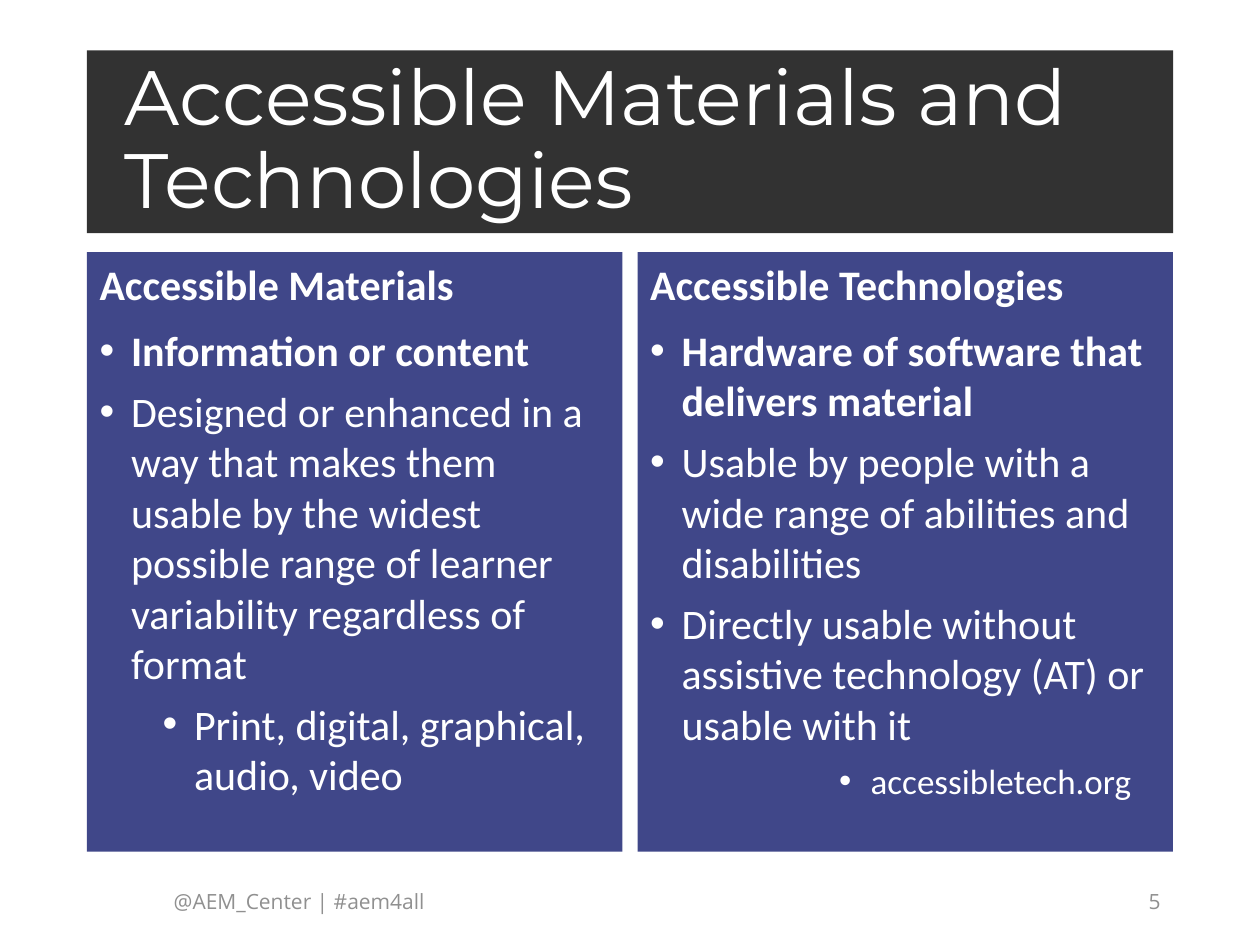
import pptx
import pptx.dml.color
import pptx.enum.text
import pptx.oxml
import pptx.oxml.ns
import pptx.util

Inches = pptx.util.Inches
Pt = pptx.util.Pt
ALIGN = pptx.enum.text.PP_ALIGN
ANCHOR = pptx.enum.text.MSO_ANCHOR

CHARCOAL, INDIGO, WHITE, GRAY = "323232", "404789", "FFFFFF", "909090"
TITLE = "Accessible Materials and Technologies"
COLUMNS = [
    [
        ("Accessible Materials", dict(bold=True)),
        ("Information or content", dict(bold=True, indent=0.25, before=9)),
        ("Designed or enhanced in a way that makes them usable by the widest "
         "possible range of learner variability regardless of format",
         dict(indent=0.25, before=6)),
        ("Print, digital, graphical, audio, video",
         dict(level=1, indent=0.75, before=6)),
    ],
    [
        ("Accessible Technologies", dict(bold=True)),
        ("Hardware of software that delivers material",
         dict(bold=True, indent=0.25, before=9)),
        ("Usable by people with a wide range of abilities and disabilities",
         dict(indent=0.25, before=6)),
        ("Directly usable without assistive technology (AT) or usable with it",
         dict(indent=0.25, before=6)),
        ("accessibletech.org", dict(level=3, indent=1.75, before=6, size=20)),
    ],
]
FOOTERS = [
    ("5", 7.06, 2.25, ALIGN.RIGHT),
    ("@AEM_Center | #aem4all", 1.28, 3.49, ALIGN.LEFT),
]
LEFT, WIDTH, COLUMN_WIDTH = 0.69, 8.62, 4.25


def color(value):
    return pptx.dml.color.RGBColor.from_string(value)


def place(shape, left, top, width, height, fill=None):
    shape.left, shape.top = Inches(left), Inches(top)
    shape.width, shape.height = Inches(width), Inches(height)
    if fill:
        shape.fill.solid()
        shape.fill.fore_color.rgb = color(fill)
    shape.text_frame.word_wrap = True
    shape.text_frame.auto_size = pptx.enum.text.MSO_AUTO_SIZE.NONE
    return shape.text_frame


def write(paragraph, text, font="Calibri", size=24, ink=WHITE, bold=False,
          align=ALIGN.LEFT, level=0, indent=0, before=0, spacing=1.0):
    paragraph.level = level
    paragraph.alignment = align
    paragraph.line_spacing = spacing
    paragraph.space_before = Pt(before)
    properties = paragraph._p.get_or_add_pPr()
    properties.set("marL", str(Inches(indent)))
    properties.set("indent", str(Inches(-0.25 if indent else 0)))
    bullet = '<a:buChar char="•" %s/>' if indent else "<a:buNone %s/>"
    properties.append(pptx.oxml.parse_xml(bullet % pptx.oxml.ns.nsdecls("a")))
    run = paragraph.add_run()
    run.text = text
    run.font.name = font
    run.font.size = Pt(size)
    run.font.bold = bold
    run.font.color.rgb = color(ink)


def main():
    deck = pptx.Presentation()
    deck.slide_width, deck.slide_height = Inches(10), Inches(7.5)
    slide = deck.slides.add_slide(deck.slide_layouts.get_by_name("Two Content"))
    heading, *bodies = slide.placeholders

    title = place(heading, LEFT, 0.4, WIDTH, 1.45, CHARCOAL)
    title.vertical_anchor = ANCHOR.MIDDLE
    title.margin_left = title.margin_right = Inches(0.3)
    write(title.paragraphs[0], TITLE, font="Montserrat", size=44, spacing=0.9)

    step = WIDTH - COLUMN_WIDTH
    for index, (body, lines) in enumerate(zip(bodies, COLUMNS)):
        column = place(body, LEFT + index * step, 2, COLUMN_WIDTH, 4.76, INDIGO)
        for row, (text, look) in enumerate(lines):
            paragraph = column.add_paragraph() if row else column.paragraphs[0]
            write(paragraph, text, **look)

    for text, left, width, align in FOOTERS:
        box = slide.shapes.add_textbox(0, 0, 0, 0)
        footer = place(box, left, 6.95, width, 0.4)
        footer.vertical_anchor = ANCHOR.MIDDLE
        write(footer.paragraphs[0], text, font="Open Sans", size=12, ink=GRAY,
              align=align)

    deck.save("out.pptx")


if __name__ == "__main__":
    main()
